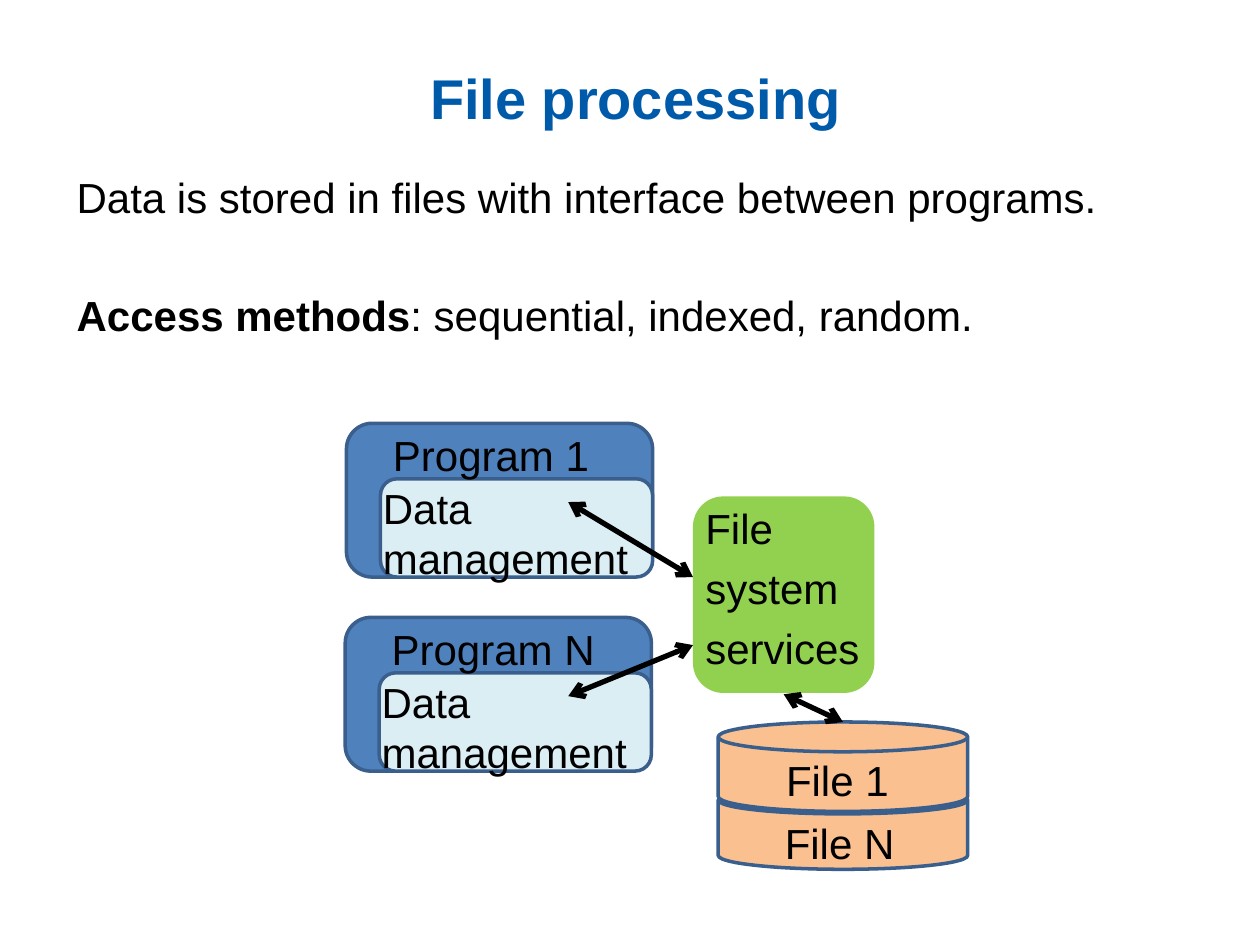
from dataclasses import dataclass
from typing import Optional

from lxml.etree import SubElement
from pptx import Presentation
from pptx.dml.color import RGBColor
from pptx.enum.shapes import MSO_CONNECTOR, MSO_SHAPE
from pptx.enum.text import MSO_ANCHOR, MSO_AUTO_SIZE, PP_ALIGN
from pptx.oxml.ns import qn
from pptx.util import Emu, Inches, Pt

COLUMNS, ROWS = 100, 75
CELL = Inches(0.1)
FONT = "Arial"
TEXT_SIZE = 24
LINE_SPACE = 5.5
BODY_GAP = 39

BLACK = RGBColor(0x00, 0x00, 0x00)
TITLE_BLUE = RGBColor(0x00, 0x5A, 0xAA)
PROGRAM_BLUE = RGBColor(0x4F, 0x81, 0xBD)
DATA_BLUE = RGBColor(0xDB, 0xEE, 0xF4)
OUTLINE_BLUE = RGBColor(0x3A, 0x5F, 0x8C)
SERVICE_GREEN = RGBColor(0x92, 0xD0, 0x50)
FILE_ORANGE = RGBColor(0xFA, 0xC0, 0x90)


@dataclass(frozen=True)
class Area:
    column: float
    row: float
    columns: float
    rows: float

    def lengths(self) -> list[Emu]:
        values = (self.column, self.row, self.columns, self.rows)
        return [Emu(round(value * CELL)) for value in values]


@dataclass(frozen=True)
class Program:
    name: str
    column: float
    row: float
    name_columns: float
    arrow_row: float


@dataclass(frozen=True)
class File:
    name: str
    disk: Area
    label: Area


PROGRAMS = (
    Program("Program 1", 27.5, 33.6, 18.9, 45.8),
    Program("Program N", 27.4, 49, 18.3, 51.2),
)
FILES = (
    File("File N", Area(57, 62.4, 19.8, 6.6), Area(61.3, 64.4, 10.8, 5)),
    File("File 1", Area(57, 57.3, 19.8, 7.1), Area(61.4, 59.4, 10.3, 5)),
)
SERVICES = Area(55, 39.4, 14.4, 15.6)


def style_span(span, size: float = TEXT_SIZE, color: RGBColor = BLACK, bold: bool = False) -> None:
    span.font.name = FONT
    span.font.size = Pt(size)
    span.font.color.rgb = color
    span.font.bold = bold


def add_text(page, area: Area, text: str, wrap: bool = False):
    box = page.shapes.add_textbox(*area.lengths())
    frame = box.text_frame
    frame.text = text
    frame.word_wrap = wrap
    frame.auto_size = MSO_AUTO_SIZE.SHAPE_TO_FIT_TEXT
    for para in frame.paragraphs:
        para.space_before = Pt(LINE_SPACE)
        for span in para.runs:
            style_span(span)
    return box


def add_block(page, kind: MSO_SHAPE, area: Area, fill: RGBColor,
              outline: Optional[RGBColor] = OUTLINE_BLUE) -> None:
    block = page.shapes.add_shape(kind, *area.lengths())
    block.shadow.inherit = False
    block.fill.solid()
    block.fill.fore_color.rgb = fill
    if outline is None:
        block.line.fill.background()
    else:
        block.line.color.rgb = outline
        block.line.width = Pt(2)


def add_arrow(page, start: tuple[float, float], end: tuple[float, float]) -> None:
    points = [Emu(round(value * CELL)) for value in start + end]
    arrow = page.shapes.add_connector(MSO_CONNECTOR.STRAIGHT, *points)
    arrow.line.color.rgb = BLACK
    arrow.line.width = Pt(3)
    line = arrow.line._get_or_add_ln()
    for tag in ("a:headEnd", "a:tailEnd"):
        SubElement(line, qn(tag), type="arrow")
    SubElement(arrow._element.spPr, qn("a:effectLst"))


def add_program(page, program: Program) -> None:
    column, row = program.column, program.row
    add_block(page, MSO_SHAPE.ROUNDED_RECTANGLE, Area(column, row, 24.3, 12.2), PROGRAM_BLUE)
    add_block(page, MSO_SHAPE.ROUNDED_RECTANGLE, Area(column + 2.7, row + 4.4, 21.6, 7.8), DATA_BLUE)
    add_text(page, Area(column + 2.7, row, program.name_columns, 5), program.name)
    add_text(page, Area(column + 1.9, row + 4.2, 23.1, 7.9), "Data\vmanagement")


def add_title(page) -> None:
    box = add_text(page, Area(0.5, 0, 99.9, 13.9), "File processing", wrap=True)
    frame = box.text_frame
    frame.auto_size = MSO_AUTO_SIZE.NONE
    frame.vertical_anchor = MSO_ANCHOR.MIDDLE
    frame.margin_top = Inches(0.2)
    para = frame.paragraphs[0]
    para.alignment = PP_ALIGN.CENTER
    para.space_before = Pt(0)
    style_span(para.runs[0], 32, TITLE_BLUE, True)


def add_body(page) -> None:
    sentence = "Data is stored in ﬁles with interface between programs."
    box = add_text(page, Area(5.1, 13.1, 90, 19.6), sentence, wrap=True)
    para = box.text_frame.add_paragraph()
    para.space_before = Pt(BODY_GAP)
    for text, bold in (("Access methods", True), (": sequential, indexed, random.", False)):
        span = para.add_run()
        span.text = text
        style_span(span, bold=bold)


def main() -> None:
    deck = Presentation()
    deck.slide_width, deck.slide_height = COLUMNS * CELL, ROWS * CELL
    page = deck.slides.add_slide(deck.slide_layouts[6])
    add_title(page)
    for file in FILES:
        add_block(page, MSO_SHAPE.FLOWCHART_MAGNETIC_DISK, file.disk, FILE_ORANGE)
    for program in PROGRAMS:
        add_program(page, program)
    add_block(page, MSO_SHAPE.ROUNDED_RECTANGLE, SERVICES, SERVICE_GREEN, None)
    add_text(page, SERVICES, "File\nsystem\nservices")
    for file in FILES:
        add_text(page, file.label, file.name)
    for program in PROGRAMS:
        add_arrow(page, (SERVICES.column, program.arrow_row), (45.1, program.row + 6.25))
    add_arrow(page, (62.2, 55.1), (66.9, 57.3))
    add_body(page)
    deck.save("out.pptx")


if __name__ == "__main__":
    main()
